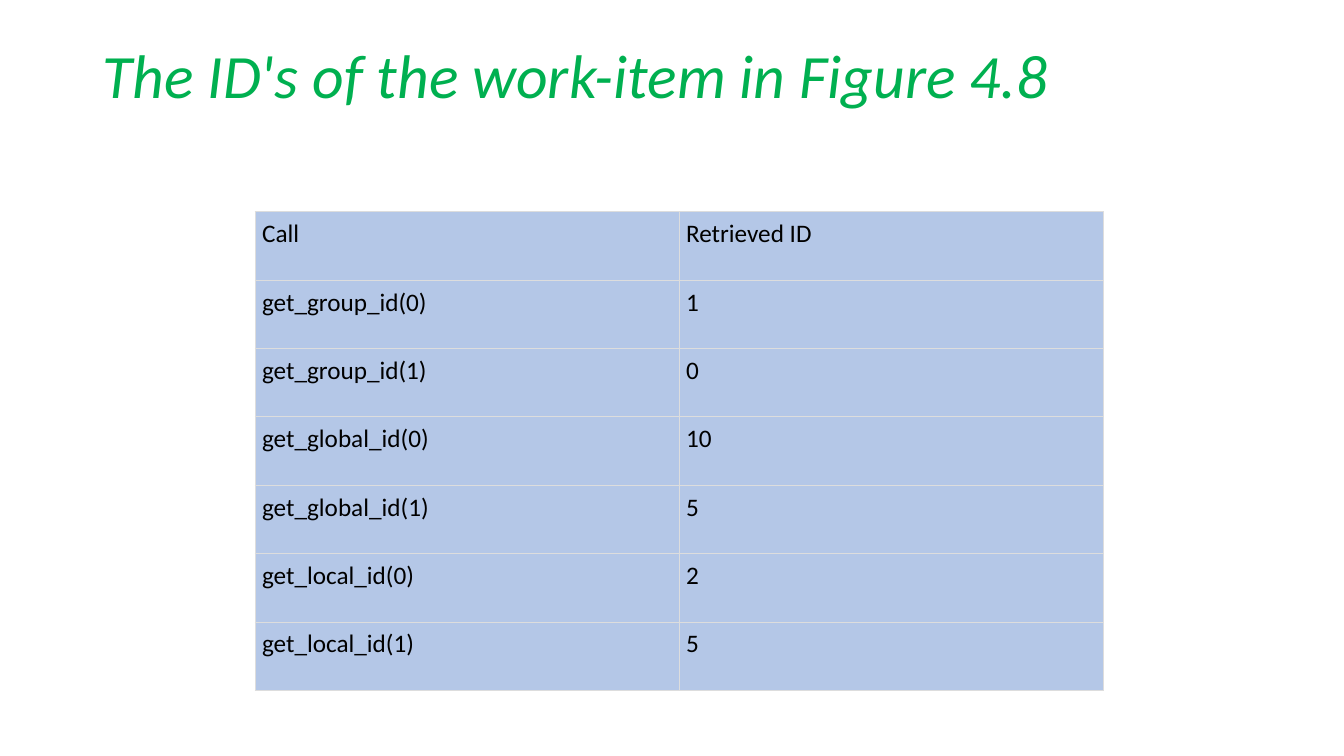
from pptx import Presentation
from pptx.dml.color import RGBColor
from pptx.enum.text import MSO_ANCHOR
from pptx.oxml import parse_xml
from pptx.oxml.ns import nsdecls
from pptx.util import Inches, Pt

TITLE = "The ID's of the work-item in Figure 4.8"
ROWS = [
    ("Call", "Retrieved ID"),
    ("get_group_id(0)", "1"),
    ("get_group_id(1)", "0"),
    ("get_global_id(0)", "10"),
    ("get_global_id(1)", "5"),
    ("get_local_id(0)", "2"),
    ("get_local_id(1)", "5"),
]
FONT = "Calibri"
GREEN, BLACK, PALE_BLUE, GREY = "00B050", "000000", "B4C7E7", "DDDDDD"
SLIDE_SIZE = (13.33, 7.5)
TITLE_BOX = (0.92, 0.4, 11.5, 1.45)
TABLE_BOX = (2.53, 2.1, 8.41, 4.75)
CELL_MARGIN = 0.07
BORDER_POINTS = 0.6


def color(value):
    return RGBColor.from_string(value)


def style_font(paragraph, size, value):
    font = paragraph.font
    font.name, font.size = FONT, Pt(size)
    font.color.rgb = color(value)


def add_title(slide):
    frame = slide.shapes.add_textbox(*map(Inches, TITLE_BOX)).text_frame
    frame.word_wrap = True
    frame.vertical_anchor = MSO_ANCHOR.TOP
    paragraph = frame.paragraphs[0]
    paragraph.text = TITLE
    paragraph.line_spacing = 0.9
    paragraph.font.italic = True
    style_font(paragraph, 44, GREEN)


def add_borders(cell):
    properties = cell._tc.get_or_add_tcPr()
    for position, side in enumerate(("lnL", "lnR", "lnT", "lnB")):
        properties.insert(position, parse_xml(
            f'<a:{side} {nsdecls("a")} w="{Pt(BORDER_POINTS)}"><a:solidFill>'
            f'<a:srgbClr val="{GREY}"/></a:solidFill></a:{side}>'))


def fill_cell(cell, text):
    cell.fill.solid()
    cell.fill.fore_color.rgb = color(PALE_BLUE)
    cell.margin_left = cell.margin_right = Inches(CELL_MARGIN)
    cell.margin_top = cell.margin_bottom = Inches(CELL_MARGIN)
    paragraph = cell.text_frame.paragraphs[0]
    paragraph.text = text
    style_font(paragraph, 18, BLACK)
    add_borders(cell)


def add_id_table(slide):
    table = slide.shapes.add_table(
        len(ROWS), len(ROWS[0]), *map(Inches, TABLE_BOX)).table
    table.first_row = table.horz_banding = False
    for row, texts in zip(table.rows, ROWS):
        for cell, text in zip(row.cells, texts):
            fill_cell(cell, text)


def main():
    presentation = Presentation()
    presentation.slide_width, presentation.slide_height = map(Inches, SLIDE_SIZE)
    slide = presentation.slides.add_slide(presentation.slide_layouts[6])
    add_title(slide)
    add_id_table(slide)
    presentation.save("out.pptx")


if __name__ == "__main__":
    main()
